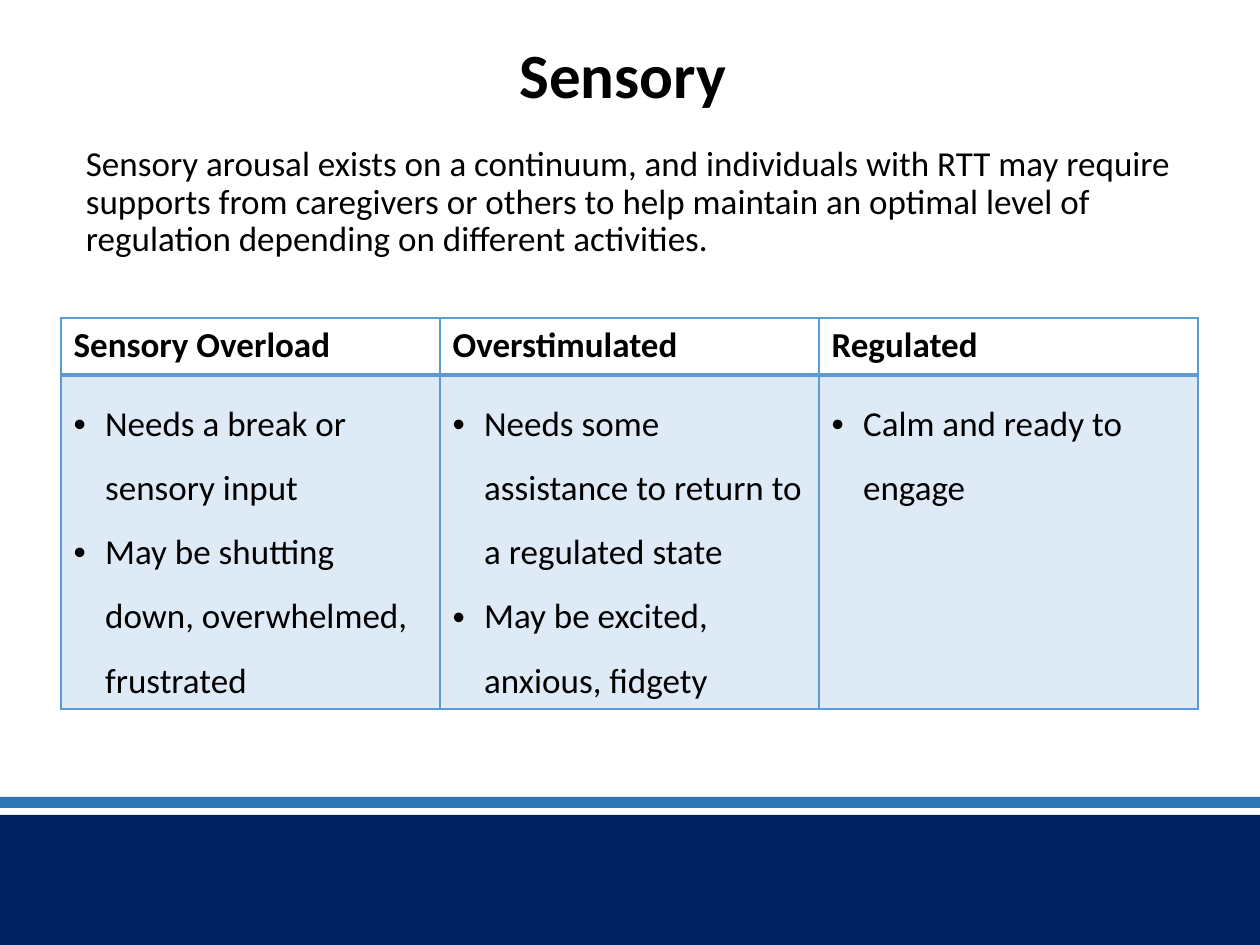
import pptx
import pptx.dml.color
import pptx.enum.shapes
import pptx.enum.text
import pptx.oxml
import pptx.oxml.ns
import pptx.util
from lxml import etree

PX = 914400 // 126
FONT = "Calibri"
COLORS = {"text": "000000", "navy": "002060", "stripe": "2E75B6",
          "border": "5B9BD5", "cell": "DEEBF7"}

# Content
TITLE = "Sensory\u00a0".replace("\u00a0", chr(160))
INTRO = ("Sensory arousal exists on a continuum, and individuals with RTT may "
         "require supports from caregivers or others to help maintain an optimal "
         "level of regulation depending on different activities.")
STATES = [
    ("Sensory Overload", ["Needs a break or sensory input",
                          "May be shutting down, overwhelmed, frustrated"]),
    ("Overstimulated", ["Needs some assistance to return to a regulated state",
                        "May be excited, anxious, fidgety"]),
    ("Regulated", ["Calm and ready to engage"]),
]
BANDS = [((0, 815, 1260, 130), "navy"), ((0, 797, 1260, 11), "stripe")]
TITLE_BOX = (87, 39, 1086, 132)
INTRO_BOX = (77, 141, 1134, 160)
TABLE_LEFT, TABLE_TOP, COLUMN_WIDTH = 61, 318, 379
ROW_HEIGHTS = (57, 334)


def emu(*lengths):
    return [pptx.util.Emu(length * PX) for length in lengths]


def rgb(name):
    return pptx.dml.color.RGBColor.from_string(COLORS[name])


def style(paragraph, size, bold=False, spacing=None):
    paragraph.font.name = FONT
    paragraph.font.size = pptx.util.Pt(size)
    paragraph.font.bold = bold
    paragraph.font.color.rgb = rgb("text")
    if spacing:
        paragraph.line_spacing = spacing


def add_text(slide, box, text, size, bold=False, align=None):
    frame = slide.shapes.add_textbox(*emu(*box)).text_frame
    frame.word_wrap = True
    frame.margin_left = frame.margin_right = emu(9)[0]
    frame.margin_top = frame.margin_bottom = emu(5)[0]
    paragraph = frame.paragraphs[0]
    paragraph.text = text
    paragraph.alignment = align
    style(paragraph, size, bold, 0.9)


def add_bullet(paragraph):
    properties = paragraph._p.get_or_add_pPr()
    indent = pptx.util.Inches(0.25)
    properties.set("marL", str(indent))
    properties.set("indent", str(-indent))
    for tag, key, value in (("a:buFont", "typeface", "Arial"),
                            ("a:buChar", "char", "•")):
        bullet = etree.SubElement(properties, pptx.oxml.ns.qn(tag))
        bullet.set(key, value)


def set_borders(cell, widths):
    properties = cell._tc.get_or_add_tcPr()
    for position, (side, width) in enumerate(widths.items()):
        line = pptx.oxml.parse_xml(
            f'<a:ln{side} {pptx.oxml.ns.nsdecls("a")} w="{pptx.util.Pt(width)}">'
            f'<a:solidFill><a:srgbClr val="{COLORS["border"]}"/></a:solidFill>'
            f'</a:ln{side}>')
        properties.insert(position, line)


def add_states_table(slide):
    frame = slide.shapes.add_table(
        len(ROW_HEIGHTS), len(STATES),
        *emu(TABLE_LEFT, TABLE_TOP, COLUMN_WIDTH * len(STATES), sum(ROW_HEIGHTS)))
    table = frame.table
    for row, height in zip(table.rows, emu(*ROW_HEIGHTS)):
        row.height = height
    for index, (state, signs) in enumerate(STATES):
        table.columns[index].width = emu(COLUMN_WIDTH)[0]
        header, body = table.cell(0, index), table.cell(1, index)

        header.text = state
        style(header.text_frame.paragraphs[0], 20, bold=True)
        header.fill.background()
        set_borders(header, {"L": 1, "R": 1, "T": 1, "B": 2})

        body.text = "\n".join(signs)
        for paragraph in body.text_frame.paragraphs:
            add_bullet(paragraph)
            style(paragraph, 20, spacing=1.5)
        body.fill.solid()
        body.fill.fore_color.rgb = rgb("cell")
        set_borders(body, {"L": 1, "R": 1, "T": 2, "B": 1})


def main():
    deck = pptx.Presentation()
    deck.slide_width, deck.slide_height = emu(1260, 945)
    slide = deck.slides.add_slide(deck.slide_layouts[6])

    # Footer bands
    for box, color in BANDS:
        band = slide.shapes.add_shape(
            pptx.enum.shapes.MSO_SHAPE.RECTANGLE, *emu(*box))
        band.shadow.inherit = False
        band.fill.solid()
        band.fill.fore_color.rgb = rgb(color)
        band.line.fill.background()

    # Title, introduction and table of states
    add_text(slide, TITLE_BOX, TITLE, 36, True, pptx.enum.text.PP_ALIGN.CENTER)
    add_text(slide, INTRO_BOX, INTRO, 20)
    add_states_table(slide)
    deck.save("out.pptx")


if __name__ == "__main__":
    main()
